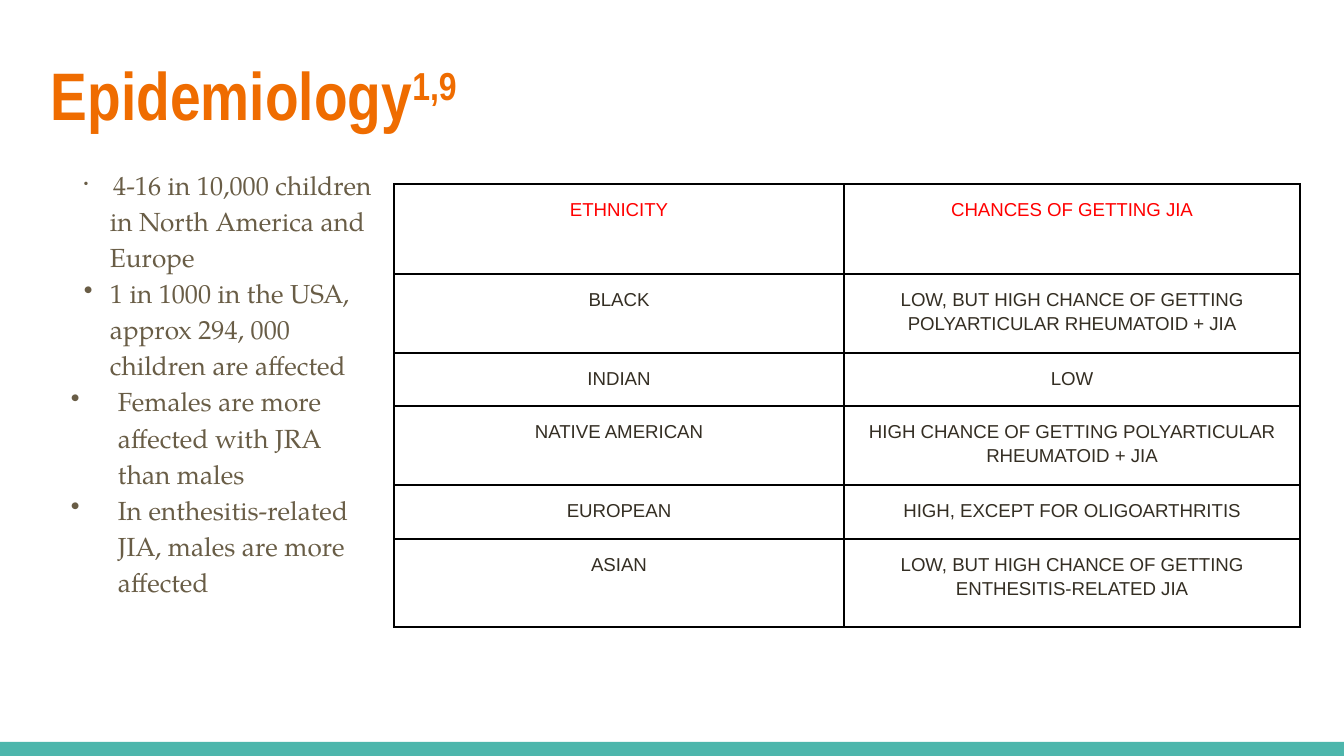
"""Build the epidemiology slide: a bullet list beside a table of ethnicity and risk."""
from lxml import etree
from pptx import Presentation
from pptx.dml.color import RGBColor
from pptx.enum.shapes import MSO_SHAPE
from pptx.enum.text import PP_ALIGN
from pptx.oxml.ns import qn
from pptx.util import Pt

RECTANGLE = MSO_SHAPE.RECTANGLE
CENTER = PP_ALIGN.CENTER

TITLE, CITATION = "Epidemiology", "1,9"
BULLETS = [
    ("4-16 in 10,000 children in North America and Europe", 59, -26),
    ("1 in 1000 in the USA, approx 294, 000 children are affected", 59, -26),
    ("Females are more affected with JRA than males", 67, -47),
    ("In enthesitis-related JIA, males are more affected", 67, -47),
]
ROWS = [
    (90, "ETHNICITY", "CHANCES OF GETTING JIA"),
    (79, "BLACK", "LOW, BUT HIGH CHANCE OF GETTING POLYARTICULAR RHEUMATOID + JIA"),
    (53, "INDIAN", "LOW"),
    (79, "NATIVE AMERICAN", "HIGH CHANCE OF GETTING POLYARTICULAR RHEUMATOID + JIA"),
    (54, "EUROPEAN", "HIGH, EXCEPT FOR OLIGOARTHRITIS"),
    (88, "ASIAN", "LOW, BUT HIGH CHANCE OF GETTING ENTHESITIS-RELATED JIA"),
]
COLUMN_WIDTHS = (450, 456)
ORANGE, TEAL, BROWN = "EF6C00", "4DB6AC", "695D46"
RED, DARK, BLACK = "FF0000", "342E23", "000000"
SPACING = 1.15


def px(length):
    return round(length * 914400 / 134.4)


def color(value):
    return RGBColor.from_string(value)


def set_font(font, name, size, value, bold=False):
    font.name, font.size, font.bold = name, Pt(size), bold
    font.color.rgb = color(value)


def add_text_box(slide, *bounds):
    frame = slide.shapes.add_textbox(*map(px, bounds)).text_frame
    frame.word_wrap = True
    frame.margin_left = frame.margin_right = px(13)
    frame.margin_top = frame.margin_bottom = px(13)
    return frame


def add_bullet(para, left, indent):
    properties = para._p.get_or_add_pPr()
    properties.set("marL", str(px(left)))
    properties.set("indent", str(px(indent)))
    bullet_color = etree.SubElement(properties, qn("a:buClr"))
    etree.SubElement(bullet_color, qn("a:srgbClr"), val=BROWN)
    etree.SubElement(properties, qn("a:buChar"), char="•")


def add_borders(cell):
    properties = cell._tc.get_or_add_tcPr()
    for position, side in enumerate(("lnL", "lnR", "lnT", "lnB")):
        line = etree.Element(qn(f"a:{side}"), w=str(Pt(1)))
        fill = etree.SubElement(line, qn("a:solidFill"))
        etree.SubElement(fill, qn("a:srgbClr"), val=BLACK)
        properties.insert(position, line)


def add_title(slide):
    para = add_text_box(slide, 38, 40, 1253, 103).paragraphs[0]
    set_font(para.font, "Arial Narrow", 36, ORANGE, True)
    for text in (TITLE, CITATION):
        span = para.add_run()
        span.text = text
        set_font(span.font, "Arial Narrow", 36, ORANGE, True)
    span.font._element.set("baseline", "30000")


def add_list(slide):
    frame = add_text_box(slide, 38, 152, 349, 567)
    for index, (text, left, indent) in enumerate(BULLETS):
        para = frame.add_paragraph() if index else frame.paragraphs[0]
        para.line_spacing = SPACING
        add_bullet(para, left, indent)
        if index == 0:
            lead = para.add_run()
            lead.text = " "
            set_font(lead.font, "Times New Roman", 7, BROWN)
        span = para.add_run()
        span.text = text
        set_font(span.font, "TeX Gyre Pagella", 14, BROWN)


def add_risk_table(slide):
    height = sum(row[0] for row in ROWS)
    bounds = map(px, (394, 184, sum(COLUMN_WIDTHS), height))
    table = slide.shapes.add_table(len(ROWS), len(COLUMN_WIDTHS), *bounds).table
    for column, width in zip(table.columns, COLUMN_WIDTHS):
        column.width = px(width)
    for row_index, (row_height, *texts) in enumerate(ROWS):
        table.rows[row_index].height = px(row_height)
        for column_index, text in enumerate(texts):
            cell = table.cell(row_index, column_index)
            cell.fill.background()
            add_borders(cell)
            cell.margin_left = cell.margin_right = px(9)
            cell.margin_top = cell.margin_bottom = px(13)
            para = cell.text_frame.paragraphs[0]
            para.text, para.alignment, para.line_spacing = text, CENTER, SPACING
            set_font(para.font, "Arial", 10, DARK if row_index else RED)
            set_font(para.runs[0].font, "Arial", 10, DARK if row_index else RED)


def main():
    deck = Presentation()
    deck.slide_width, deck.slide_height = px(1344), px(756)
    slide = deck.slides.add_slide(deck.slide_layouts[6])
    bar = slide.shapes.add_shape(RECTANGLE, *map(px, (0, 742, 1344, 14)))
    bar.shadow.inherit = False
    bar.fill.solid()
    bar.fill.fore_color.rgb = color(TEAL)
    bar.line.fill.background()
    add_title(slide)
    add_list(slide)
    add_risk_table(slide)
    deck.save("out.pptx")


if __name__ == "__main__":
    main()
